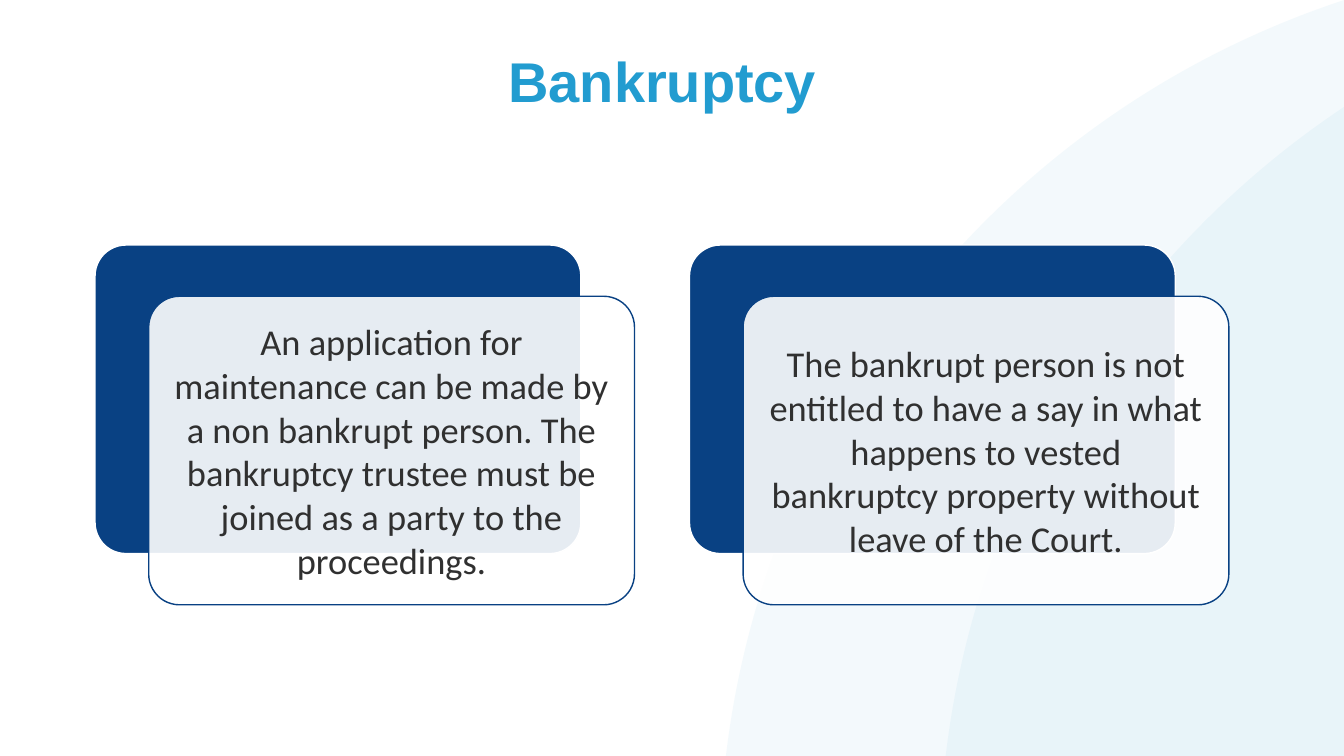
from lxml import etree
from pptx import Presentation
from pptx import util as u
from pptx.dml.color import RGBColor
from pptx.enum import shapes, text
from pptx.oxml.ns import qn

SKY = RGBColor(0x22, 0x9C, 0xD0)
NAVY = RGBColor(0x09, 0x41, 0x83)
WHITE = RGBColor(0xFF, 0xFF, 0xFF)
INK = RGBColor(0x30, 0x30, 0x30)

CARD_TEXTS = [
    "An application for maintenance can be made by a non bankrupt person. "
    "The bankruptcy trustee must be joined as a party to the proceedings.",
    "The bankrupt person is not entitled to have a say in what happens to "
    "vested bankruptcy property without leave of the Court.",
]
CARD_LEFT, CARD_TOP, CARD_PITCH = 67.9, 175, 424.6
CARD_WIDTH, CARD_HEIGHT = 347, 220.4
PANEL_SHIFT_X, PANEL_SHIFT_Y = 38.3, 36.6
TEXT_MARGIN = 6.5


def add_filled_shape(slide, kind, left, top, width, height, fill, opacity=100, line=None):
    shape = slide.shapes.add_shape(kind, u.Pt(left), u.Pt(top), u.Pt(width), u.Pt(height))
    shape.shadow.inherit = False
    shape.fill.solid()
    shape.fill.fore_color.rgb = fill
    if opacity < 100:
        color = shape.fill._xPr.find(qn("a:solidFill"))[0]
        etree.SubElement(color, qn("a:alpha")).set("val", str(opacity * 1000))
    if line is None:
        shape.line.fill.background()
    else:
        shape.line.color.rgb = line
        shape.line.width = u.Pt(1)
    return shape


def add_text(slide, content, left, top, width, height, *, font, size, color,
             bold=False, anchor=text.MSO_ANCHOR.TOP, inset=(7.2, 3.6), spacing=1.0):
    box = slide.shapes.add_textbox(u.Pt(left), u.Pt(top), u.Pt(width), u.Pt(height))
    frame = box.text_frame
    frame.word_wrap = True
    frame.vertical_anchor = anchor
    frame.margin_left = frame.margin_right = u.Pt(inset[0])
    frame.margin_top = frame.margin_bottom = u.Pt(inset[1])
    paragraph = frame.paragraphs[0]
    paragraph.alignment = text.PP_ALIGN.CENTER
    paragraph.line_spacing = spacing
    run = paragraph.add_run()
    run.text = content
    run.font.name = font
    run.font.size = u.Pt(size)
    run.font.bold = bold
    run.font.color.rgb = color


def add_card(slide, content, left, top):
    rounded = shapes.MSO_SHAPE.ROUNDED_RECTANGLE
    panel_left, panel_top = left + PANEL_SHIFT_X, top + PANEL_SHIFT_Y
    back = add_filled_shape(slide, rounded, left, top, CARD_WIDTH, CARD_HEIGHT,
                            NAVY, line=WHITE)
    panel = add_filled_shape(slide, rounded, panel_left, panel_top, CARD_WIDTH, CARD_HEIGHT,
                             WHITE, opacity=90, line=NAVY)
    for shape in (back, panel):
        shape.adjustments[0] = 0.1
    add_text(slide, content, panel_left + TEXT_MARGIN, panel_top + TEXT_MARGIN,
             CARD_WIDTH - 2 * TEXT_MARGIN, CARD_HEIGHT - 2 * TEXT_MARGIN,
             font="Calibri", size=26, color=INK,
             anchor=text.MSO_ANCHOR.MIDDLE, inset=(7.8, 7.8))


def main():
    presentation = Presentation()
    presentation.slide_width = u.Pt(960)
    presentation.slide_height = u.Pt(540)
    slide = presentation.slides.add_slide(presentation.slide_layouts[6])

    # Background arcs
    for left in (514, 671):
        add_filled_shape(slide, shapes.MSO_SHAPE.OVAL, left, -32.4, 1297.4, 1297.4,
                         SKY, opacity=5)

    # Title
    add_text(slide, "Bankruptcy", 67.7, 35.3, 810.7, 69.8,
             font="Arial", size=40, color=SKY, bold=True, spacing=0.9)

    # Cards
    for index, content in enumerate(CARD_TEXTS):
        add_card(slide, content, CARD_LEFT + index * CARD_PITCH, CARD_TOP)

    presentation.save("out.pptx")


if __name__ == "__main__":
    main()
